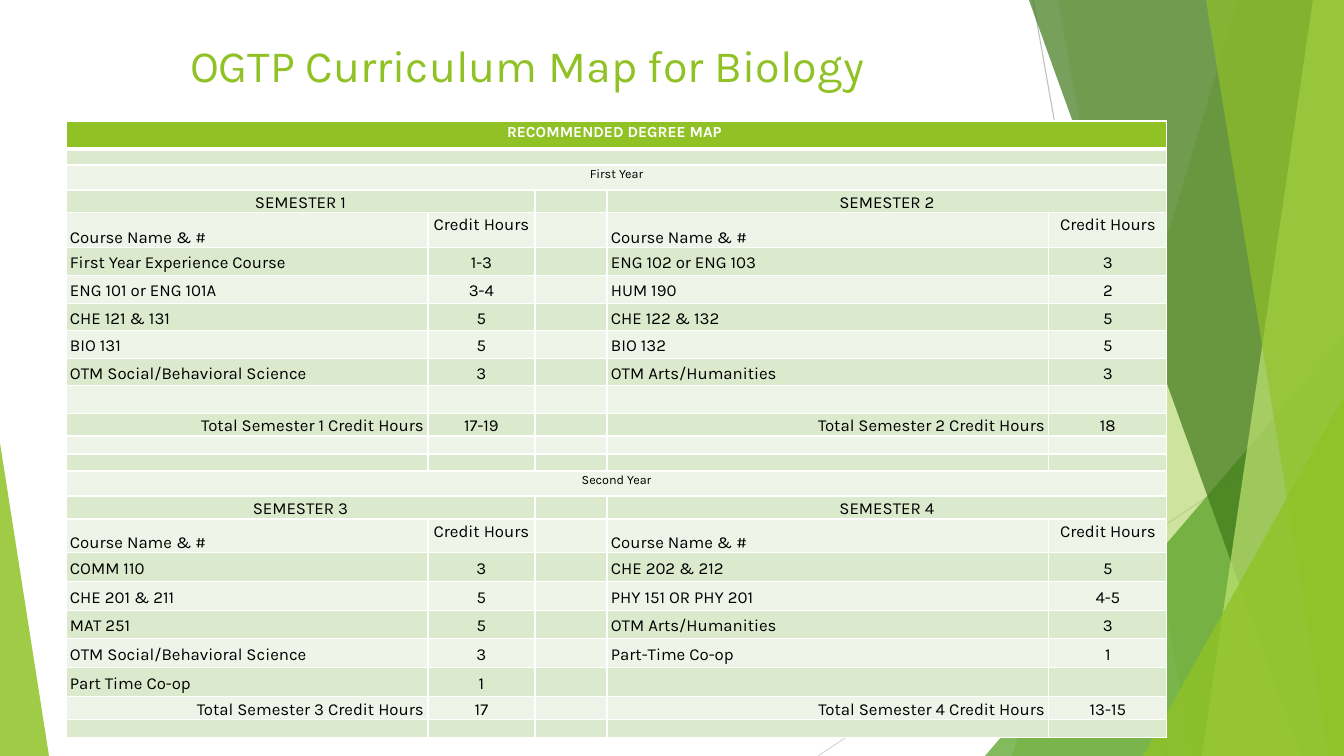
from lxml.etree import SubElement
from pptx import Presentation
from pptx.dml.color import RGBColor
from pptx.enum.shapes import MSO_CONNECTOR, MSO_SHAPE
from pptx.enum.text import MSO_ANCHOR, PP_ALIGN
from pptx.oxml.ns import qn
from pptx.util import Pt

PX = 914400 / 100.8
W, H = 1344, 756
FONT = "Karla"
C = {
    "green": "90C226", "mid": "54A021", "dark": "3F7819", "lime": "C0E474",
    "band": "DBE9CD", "pale": "EEF4E8", "white": "FFFFFF", "black": "000000",
    "gray": "BFBFBF", "silver": "D9D9D9",
}


def px(*values):
    return [round(v * PX) for v in values]


def paint(shape, color, alpha):
    shape.shadow.inherit = False
    shape.fill.solid()
    shape.fill.fore_color.rgb = RGBColor.from_string(C[color])
    shape.line.fill.background()
    clr = shape.fill._xPr.find(qn("a:solidFill"))[0]
    SubElement(clr, qn("a:alpha"), val=str(alpha * 1000))


prs = Presentation()
prs.slide_width, prs.slide_height = px(W, H)
s = prs.slides.add_slide(prs.slide_layouts[5])

for x1, y1, x2, y2, color in [
    (1033, 0, 1167, H, "gray"),
    (W, 406, 818, H, "silver"),
]:
    line = s.shapes.add_connector(MSO_CONNECTOR.STRAIGHT, *px(x1, y1, x2, y2))
    line.line.color.rgb = RGBColor.from_string(C[color])
    line.line.width = Pt(0.75)
    SubElement(line._element.spPr, qn("a:effectLst"))

facets = [
    ("band", 1238, 1012, "green", 30),
    ("band", 1058, 1192, "green", 20),
    ("triangle", (985, 336, 359, 420), 1, "mid", 72),
    ("band", 1029, 1301, "dark", 70),
    ("band", 1313, 1202, "lime", 70),
    ("band", 1206, 1329, "green", 65),
    ("triangle", (1143, 396, 201, 360), 1, "green", 80),
    ("triangle", (0, 443, 49, 313), 0, "green", 85),
]
for kind, a, b, color, alpha in facets:
    if kind == "band":
        fb = s.shapes.build_freeform(a, 0, scale=PX)
        fb.add_line_segments([(W, 0), (W, H), (b, H)], close=True)
        sp = fb.convert_to_shape()
    else:
        sp = s.shapes.add_shape(MSO_SHAPE.ISOSCELES_TRIANGLE, *px(*a))
        sp.adjustments[0] = b
    paint(sp, color, alpha)

title = s.shapes.title
title.left, title.top, title.width, title.height = px(180, 33, 783, 145)
tf = title.text_frame
tf.word_wrap = True
tf.vertical_anchor = MSO_ANCHOR.TOP
p = tf.paragraphs[0]
p.alignment = PP_ALIGN.LEFT
r = p.add_run()
r.text = "OGTP Curriculum Map for Biology"
r.font.size = Pt(32)
r.font.name = FONT
r.font.color.rgb = RGBColor.from_string(C["green"])

BLANK = ("", "", "", "", "")
HEADS = ("Course Name & #", "Credit Hours", "", "Course Name & #", "Credit Hours")
rows = [
    (28, ("RECOMMENDED DEGREE MAP ",)),
    (16, ("",)),
    (25, ("First Year",)),
    (22, ("SEMESTER 1", "", "", "SEMESTER 2", "")),
    (35, HEADS),
    (28, ("First Year Experience Course", "1-3", "", "ENG 102 or ENG 103", "3")),
    (28, ("ENG 101 or ENG 101A", "3-4", "", "HUM 190", "2")),
    (27, ("CHE 121 & 131", "5", "", "CHE 122 & 132", "5")),
    (28, ("BIO 131", "5", "", "BIO 132", "5")),
    (27, ("OTM Social/Behavioral Science", "3", "", "OTM Arts/Humanities", "3")),
    (28, BLANK),
    (22, ("Total Semester 1 Credit Hours", "17-19", "", "Total Semester 2 Credit Hours", "18")),
    (18, BLANK),
    (17, BLANK),
    (25, ("Second Year",)),
    (23, ("SEMESTER 3", "", "", "SEMESTER 4", "")),
    (34, HEADS),
    (29, ("COMM 110", "3", "", "CHE 202 & 212", "5")),
    (29, ("CHE 201 & 211", "5", "", "PHY 151 OR PHY 201", "4-5")),
    (28, ("MAT 251", "5", "", "OTM Arts/Humanities", "3")),
    (29, ("OTM Social/Behavioral Science", "3", "", "Part-Time Co-op", "1")),
    (29, ("Part Time Co-op", "1", "", "", "")),
    (23, ("Total Semester 3 Credit Hours", "17", "", "Total Semester 4 Credit Hours", "13-15")),
    (18, BLANK),
]
widths = [362, 107, 72, 442, 118]
height = sum(h for h, _ in rows)
table = s.shapes.add_table(len(rows), len(widths), *px(66, 121, sum(widths), height)).table
for col, width in zip(table.columns, widths):
    col.width = px(width)[0]

for i, (h, texts) in enumerate(rows):
    table.rows[i].height = px(h)[0]
    banner = len(texts) == 1
    semester = texts[0].startswith("SEMESTER")
    if banner:
        table.cell(i, 0).merge(table.cell(i, 4))
    if semester:
        for j in (0, 3):
            table.cell(i, j).merge(table.cell(i, j + 1))
    for j in range(len(widths)):
        text = texts[j] if j < len(texts) else ""
        total = text.startswith("Total")
        cell = table.cell(i, j)
        cell.margin_left = cell.margin_right = px(4)[0]
        cell.margin_top = cell.margin_bottom = 0
        if text == "Course Name & #":
            cell.vertical_anchor = MSO_ANCHOR.BOTTOM
        elif banner or semester or total or text == "Credit Hours":
            cell.vertical_anchor = MSO_ANCHOR.TOP
        else:
            cell.vertical_anchor = MSO_ANCHOR.MIDDLE
        tcPr = cell._tc.get_or_add_tcPr()
        for side in "LRTB":
            weight = 3 if i == 0 and side == "B" or i == 1 and side == "T" else 1
            ln = SubElement(tcPr, qn(f"a:ln{side}"), w=str(Pt(weight)))
            SubElement(SubElement(ln, qn("a:solidFill")), qn("a:srgbClr"), val=C["white"])
        cell.fill.solid()
        fill = "green" if i == 0 else "band" if i % 2 else "pale"
        cell.fill.fore_color.rgb = RGBColor.from_string(C[fill])
        p = cell.text_frame.paragraphs[0]
        if not text:
            SubElement(p._p, qn("a:endParaRPr"), sz="600")
            continue
        p.line_spacing = 1.15
        if total:
            p.alignment = PP_ALIGN.RIGHT
        elif banner or semester or j in (1, 4):
            p.alignment = PP_ALIGN.CENTER
        else:
            p.alignment = PP_ALIGN.LEFT
        r = p.add_run()
        r.text = text
        r.font.name = FONT
        r.font.size = Pt(11 if i == 0 else 9 if banner else 12)
        r.font.bold = i == 0
        r.font.color.rgb = RGBColor.from_string(C["white" if i == 0 else "black"])

prs.save("out.pptx")
